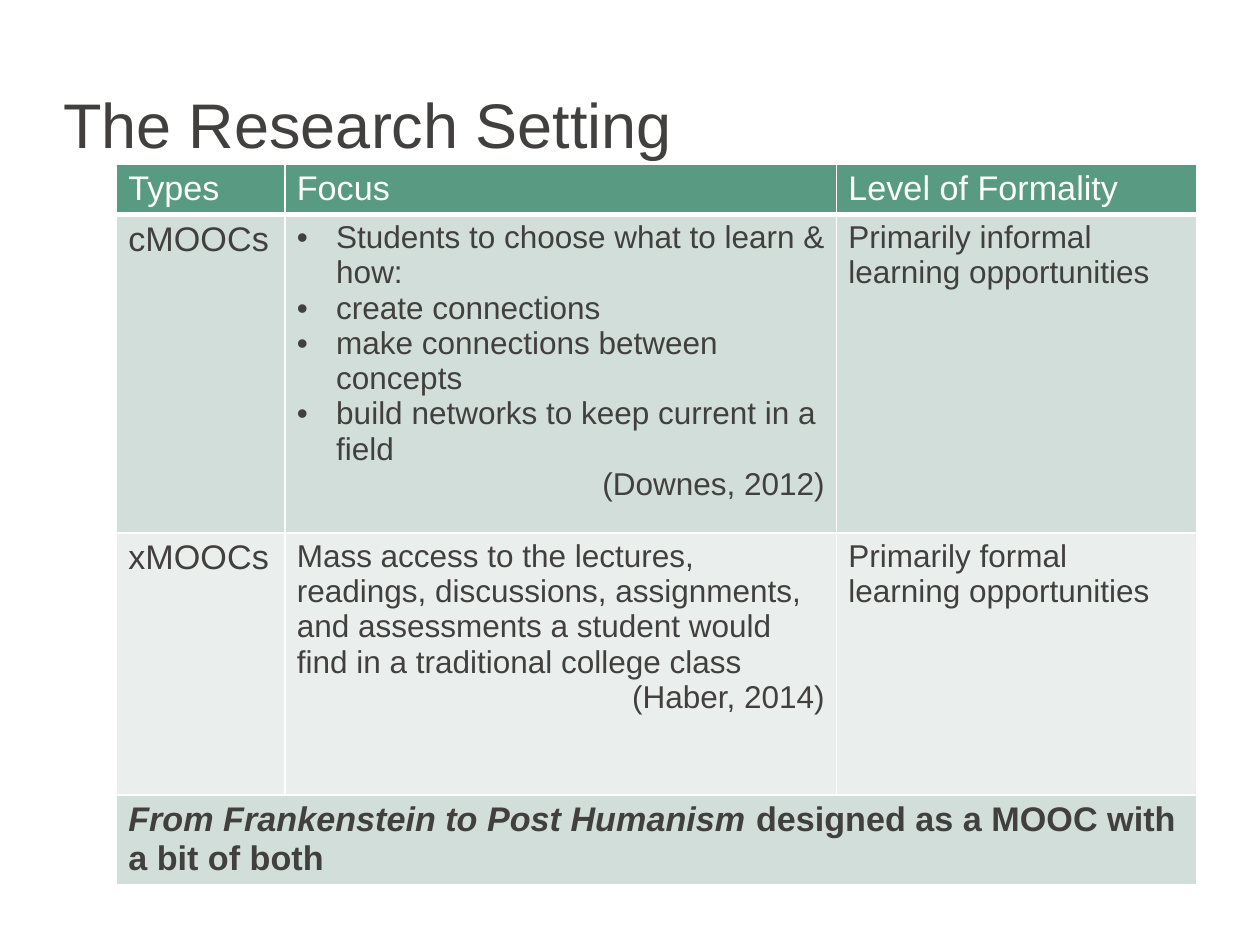
from dataclasses import dataclass

from lxml.etree import SubElement
from pptx import Presentation
from pptx.dml.color import RGBColor
from pptx.enum.text import MSO_ANCHOR, PP_ALIGN
from pptx.oxml import parse_xml
from pptx.oxml.ns import nsdecls, qn
from pptx.util import Pt

FONT = "Arial"
INK, WHITE = "423F3F", "FFFFFF"
GREEN, SAGE, PALE = "599A83", "D1DED9", "EAEFED"
BIG, SMALL = 19.5, 18


@dataclass
class Line:
    text: str
    size: float = SMALL
    bullet: bool = False
    right: bool = False
    bold: bool = False
    slant: str = ""  # italic words that lead the line


@dataclass
class Row:
    height: float
    fill: str
    cells: list[list[Line]]
    ink: str = INK
    base: float = 1  # width of the bottom border


def color(code: str) -> RGBColor:
    return RGBColor.from_string(code)


def style(run, size: float, ink: str, bold: bool = False, italic: bool = False) -> None:
    font = run.font
    font.name, font.size = FONT, Pt(size)
    font.bold, font.italic = bold, italic
    font.color.rgb = color(ink)


def write(para, line: Line, ink: str) -> None:
    para.alignment = PP_ALIGN.RIGHT if line.right else PP_ALIGN.LEFT
    for text, italic in ((line.slant, True), (line.text, False)):
        if text:
            run = para.add_run()
            run.text = text
            style(run, line.size, ink, line.bold, italic)
    if line.bullet:
        props = para._p.get_or_add_pPr()
        props.set("marL", str(Pt(22.5)))
        props.set("indent", str(-Pt(22.5)))
        SubElement(props, qn("a:buFont")).set("typeface", FONT)
        SubElement(props, qn("a:buChar")).set("char", "•")


def border(cell, base: float) -> None:
    props = cell._tc.get_or_add_tcPr()
    for spot, side in enumerate("LRTB"):
        width = Pt(base if side == "B" else 1)
        props.insert(spot, parse_xml(
            f'<a:ln{side} {nsdecls("a")} w="{width}"><a:solidFill>'
            f'<a:srgbClr val="{WHITE}"/></a:solidFill></a:ln{side}>'))


def fill_cell(cell, lines: list[Line], row: Row) -> None:
    cell.margin_left = cell.margin_right = Pt(6.75)
    cell.margin_top = cell.margin_bottom = Pt(3.3)
    cell.vertical_anchor = MSO_ANCHOR.TOP
    cell.fill.solid()
    cell.fill.fore_color.rgb = color(row.fill)
    border(cell, row.base)
    frame = cell.text_frame
    for i, line in enumerate(lines):
        write(frame.add_paragraph() if i else frame.paragraphs[0], line, row.ink)


def add_grid(slide, left: float, top: float, widths: list[float], rows: list[Row]) -> None:
    high = sum(row.height for row in rows)
    table = slide.shapes.add_table(len(rows), len(widths), Pt(left), Pt(top),
                                   Pt(sum(widths)), Pt(high)).table
    for col, width in zip(table.columns, widths):
        col.width = Pt(width)
    for r, row in enumerate(rows):
        table.rows[r].height = Pt(row.height)
        if len(row.cells) == 1:
            table.cell(r, 0).merge(table.cell(r, len(widths) - 1))
        for c, lines in enumerate(row.cells):
            fill_cell(table.cell(r, c), lines, row)


def add_title(slide, text: str) -> None:
    title = slide.shapes.title
    title.left, title.top, title.width, title.height = Pt(36), Pt(39.6), Pt(648), Pt(69.8)
    frame = title.text_frame
    frame.text = text
    frame.word_wrap = True
    frame.vertical_anchor = MSO_ANCHOR.MIDDLE
    frame.margin_left = frame.margin_right = frame.margin_top = frame.margin_bottom = 0
    para = frame.paragraphs[0]
    para.alignment, para.line_spacing = PP_ALIGN.LEFT, 0.8
    style(para.runs[0], 36, INK)


# Table content
POINTS = ["Students to choose what to learn & how:", "create connections",
          "make connections between concepts", "build networks to keep current in a field"]
ROWS = [
    Row(28.8, GREEN, [[Line(text, BIG)] for text in ("Types", "Focus", "Level of Formality")],
        ink=WHITE, base=3),
    Row(182.2, SAGE, [
        [Line("cMOOCs", BIG)],
        [Line(text, bullet=True) for text in POINTS] + [Line("(Downes, 2012)", right=True)],
        [Line("Primarily informal learning opportunities")]]),
    Row(149.8, PALE, [
        [Line("xMOOCs", BIG)],
        [Line("Mass access to the lectures, readings, discussions, assignments, "
              "and assessments a student would find in a traditional college class"),
         Line("(Haber, 2014)", right=True)],
        [Line("Primarily formal learning opportunities")]]),
    Row(51, SAGE, [[Line("designed as a MOOC with a bit of both", BIG, bold=True,
                         slant="From Frankenstein to Post Humanism ")]]),
]


def main() -> None:
    deck = Presentation()
    deck.slide_width, deck.slide_height = Pt(720), Pt(540)
    slide = deck.slides.add_slide(deck.slide_layouts[5])
    add_title(slide, "The Research Setting")
    add_grid(slide, 66.6, 93.6, [96.3, 315.2, 205.9], ROWS)
    deck.save("out.pptx")


if __name__ == "__main__":
    main()
